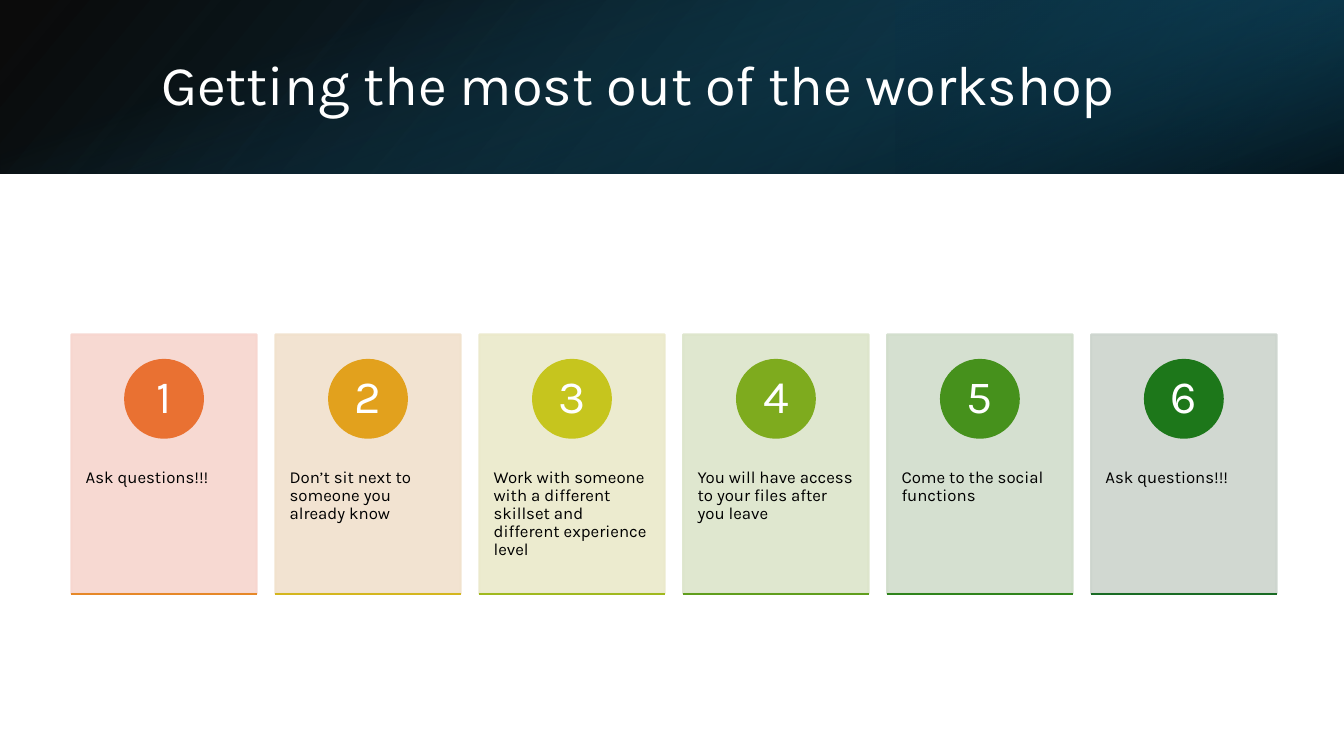
from lxml import etree
from pptx import Presentation
from pptx.dml.color import RGBColor
from pptx.enum.shapes import MSO_CONNECTOR as CONNECTOR, MSO_SHAPE as SHAPE
from pptx.enum.text import MSO_ANCHOR as ANCHOR, PP_ALIGN as ALIGN
from pptx.oxml import parse_xml
from pptx.oxml.ns import nsdecls, qn
from pptx.util import Cm, Pt

THEME = {
    "font": "Karla",
    "title_size": Pt(40), "number_size": Pt(33), "tip_size": Pt(12),
    "line_width": Pt(1.5),
    "light": "FFFFFF", "dark": "000000",
    "blue": "156082", "blue_deep": "104862", "blue_night": "0B3041",
    "card_alpha": 90,
    "cards": ["F7D5CE", "F1E1CC", "EBE9CA", "DCE5CA", "D1DDCB", "CCD4CD"],
    "circles": ["E97132", "E2A11D", "C6C51E", "7EAB1E", "46911C", "1D771A"],
    "rules": ["E68828", "D4B61E", "A0B91E", "609E1D", "2F841C", "196B24"],
}


def add_block(kind, left, top, width, height, color):
    """Add a preset shape whose fill and line share one colour."""
    shape = slide.shapes.add_shape(kind, Cm(left), Cm(top), Cm(width), Cm(height))
    shape.shadow.inherit = False
    shape.fill.solid()
    shape.fill.fore_color.rgb = RGBColor.from_string(color)
    shape.line.color.rgb = RGBColor.from_string(color)
    shape.line.width = THEME["line_width"]
    return shape


def set_text(shape, text, size, color, align, frame_format):
    frame = shape.text_frame
    for name, value in frame_format.items():
        setattr(frame, name, value)
    paragraph = frame.paragraphs[0]
    paragraph.alignment = align
    paragraph.line_spacing = 0.9
    run = paragraph.add_run()
    run.text = text
    run.font.name = THEME["font"]
    run.font.size = size
    run.font.color.rgb = RGBColor.from_string(color)


presentation = Presentation()
presentation.slide_width, presentation.slide_height = Cm(33.87), Cm(19.05)
slide = presentation.slides.add_slide(presentation.slide_layouts[6])

# Header band: three layered gradients; stops are (position, colour, opacity)
BAND_WIDTH, BAND_HEIGHT = 33.87, 4.38
side = (BAND_WIDTH - BAND_HEIGHT) / 2
band_layers = [
    ((0, 0, BAND_WIDTH, BAND_HEIGHT), 0, True, 140,
     [(0, THEME["dark"], 96), (100, THEME["blue_deep"], 100)]),
    ((22.58, 0, 11.29, BAND_HEIGHT), 180, True, 320,
     [(19, THEME["blue_night"], 68), (100, THEME["blue"], 79)]),
    ((side, -side, BAND_HEIGHT, BAND_WIDTH), 90, False, 340,
     [(23, THEME["blue"], 0), (99, THEME["dark"], 74)]),
]
for box, rotation, flipped, angle, stops in band_layers:
    layer = add_block(SHAPE.RECTANGLE, *box, THEME["dark"])
    layer.line.fill.background()
    layer.rotation = rotation
    properties = layer.element.spPr
    if flipped:
        properties.find(qn("a:xfrm")).set("flipH", "1")
    stop_xml = "".join(
        f'<a:gs pos="{position * 1000}"><a:srgbClr val="{color}">'
        f'<a:alpha val="{alpha * 1000}"/></a:srgbClr></a:gs>'
        for position, color, alpha in stops)
    gradient = parse_xml(
        f'<a:gradFill {nsdecls("a")} rotWithShape="1"><a:gsLst>{stop_xml}</a:gsLst>'
        f'<a:lin ang="{angle * 60000}" scaled="0"/></a:gradFill>')
    properties.replace(properties.find(qn("a:solidFill")), gradient)

title = slide.shapes.add_textbox(Cm(3.81), Cm(0.97), Cm(27.89), Cm(2.44))
set_text(title, "Getting the most out of the workshop", THEME["title_size"],
         THEME["light"], ALIGN.LEFT,
         {"word_wrap": True, "vertical_anchor": ANCHOR.MIDDLE})

# Row of numbered tip cards
tips = [
    "Ask questions!!!",
    "Don’t sit next to someone you already know",
    "Work with someone with a different skillset and different experience level",
    "You will have access to your files after you leave",
    "Come to the social functions",
    "Ask questions!!!",
]
CARD_LEFT, CARD_TOP, CARD_WIDTH, CARD_HEIGHT = 1.8, 8.43, 4.67, 6.53
CARD_PITCH = 5.14
CIRCLE_TOP, CIRCLE_SIZE = 9.07, 1.96
tip_format = {"word_wrap": True, "vertical_anchor": ANCHOR.TOP,
              "margin_left": Cm(0.36), "margin_right": Cm(0.36),
              "margin_top": Cm(3.38), "margin_bottom": Cm(0.91)}
number_format = {"word_wrap": False, "vertical_anchor": ANCHOR.MIDDLE,
                 "margin_left": 0, "margin_right": 0,
                 "margin_top": 0, "margin_bottom": 0}

for index, tip in enumerate(tips):
    left = CARD_LEFT + index * CARD_PITCH
    bottom = CARD_TOP + CARD_HEIGHT

    card = add_block(SHAPE.RECTANGLE, left, CARD_TOP, CARD_WIDTH, CARD_HEIGHT,
                     THEME["cards"][index])
    for color in card.element.spPr.iter(qn("a:srgbClr")):
        etree.SubElement(color, qn("a:alpha"), val=str(THEME["card_alpha"] * 1000))
    set_text(card, tip, THEME["tip_size"], THEME["dark"], ALIGN.LEFT, tip_format)

    circle = add_block(SHAPE.OVAL, left + (CARD_WIDTH - CIRCLE_SIZE) / 2, CIRCLE_TOP,
                       CIRCLE_SIZE, CIRCLE_SIZE, THEME["circles"][index])
    set_text(circle, str(index + 1), THEME["number_size"], THEME["light"],
             ALIGN.CENTER, number_format)

    rule = slide.shapes.add_connector(CONNECTOR.STRAIGHT, Cm(left), Cm(bottom),
                                      Cm(left + CARD_WIDTH), Cm(bottom))
    rule.line.color.rgb = RGBColor.from_string(THEME["rules"][index])
    rule.line.width = THEME["line_width"]
    etree.SubElement(rule.element.spPr, qn("a:effectLst"))

presentation.save("out.pptx")
